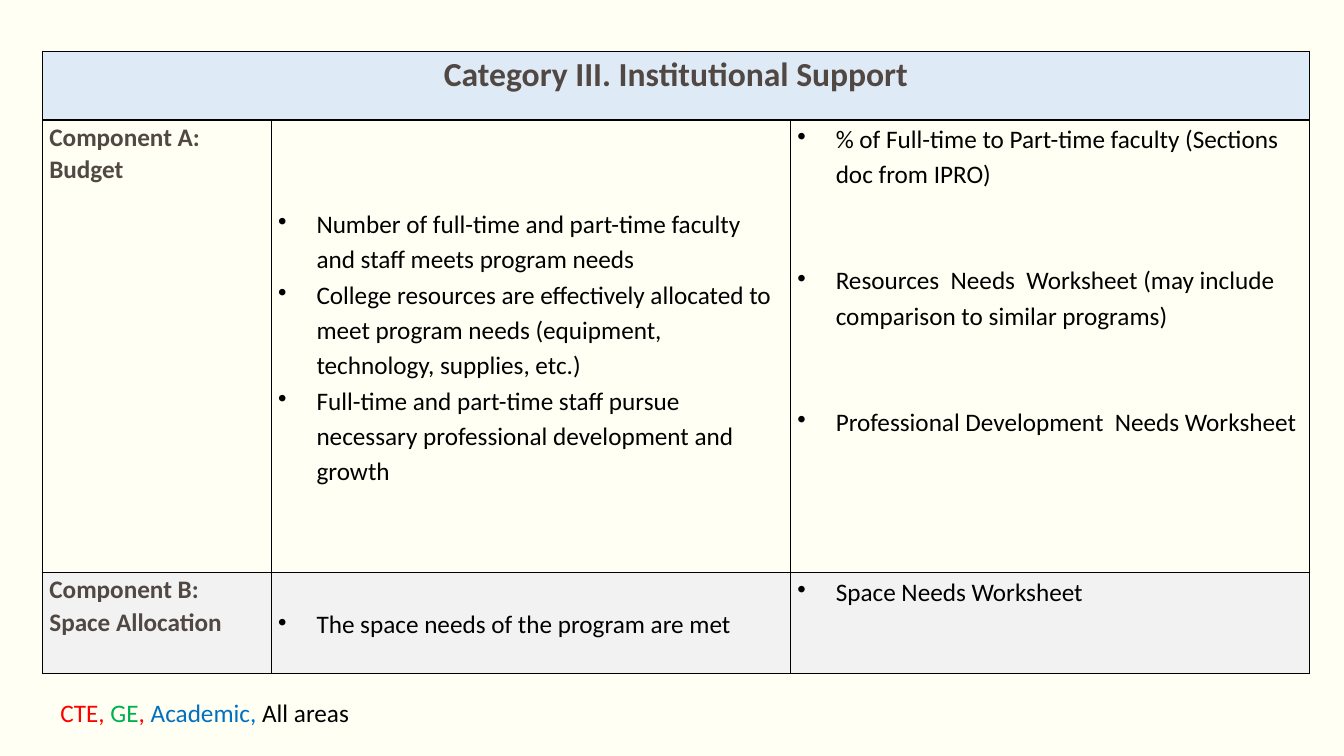
from dataclasses import dataclass

from lxml import etree
from pptx import Presentation
from pptx.dml.color import RGBColor
from pptx.enum.text import MSO_ANCHOR as Anchor, MSO_AUTO_SIZE as AutoSize, PP_ALIGN as Align
from pptx.oxml.ns import qn
from pptx.util import Inches, Pt

COLORS = {
    "page": "FFFFF3", "header": "DEEAF6", "band": "F2F2F2",
    "heading": "514843", "black": "000000",
    "red": "FF0000", "green": "00B050", "blue": "0070C0",
}
FONT = "Calibri"
COLUMN_WIDTHS = (2.27, 5.15, 5.15)
ROW_HEIGHTS = (0.68, 4.49, 1.0)
HANGING = Inches(0.38)


@dataclass(frozen=True)
class Component:
    heading: str
    criteria: tuple[str, ...]
    evidence: tuple[str, ...]
    evidence_gap: float = 0
    fill: str | None = None


COMPONENTS = (
    Component(
        "Component A: Budget",
        ("Number of full-time and part-time faculty and staff meets program needs",
         "College resources are effectively allocated to meet program needs "
         "(equipment, technology, supplies, etc.)",
         "Full-time and part-time staff pursue necessary professional development and growth"),
        ("% of Full-time to Part-time faculty (Sections doc from IPRO)",
         "Resources  Needs  Worksheet (may include comparison to similar programs)",
         "Professional Development  Needs Worksheet"),
        evidence_gap=50.5,
    ),
    Component(
        "Component B: Space Allocation",
        ("The space needs of the program are met",),
        ("Space Needs Worksheet",),
        fill="band",
    ),
)
LEGEND = (("CTE, ", "red"), ("GE", "green"), (", ", "red"),
          ("Academic, ", "blue"), ("All areas", "black"))


def rgb(name: str) -> RGBColor:
    return RGBColor.from_string(COLORS[name])


def style_font(font, color: str, size: int = 18, bold: bool = False) -> None:
    font.name, font.size, font.bold = FONT, Pt(size), bold
    font.color.rgb = rgb(color)


def style_cell(cell, fill: str | None) -> None:
    """Set the margins, fill and thin black borders of one cell."""
    cell.margin_left = cell.margin_right = Inches(0.07)
    cell.margin_top = cell.margin_bottom = 0
    if fill:
        cell.fill.solid()
        cell.fill.fore_color.rgb = rgb(fill)
    else:
        cell.fill.background()
    properties = cell._tc.get_or_add_tcPr()
    for position, side in enumerate(("lnL", "lnR", "lnT", "lnB")):
        border = etree.Element(qn(f"a:{side}"), w=str(Pt(1)))
        solid = etree.SubElement(border, qn("a:solidFill"))
        etree.SubElement(solid, qn("a:srgbClr"), val=COLORS["black"])
        properties.insert(position, border)


def write_heading(cell, text: str, size: int = 18, align: Align = Align.LEFT) -> None:
    heading = cell.text_frame.paragraphs[0]
    heading.text = text
    heading.alignment = align
    heading.line_spacing = 1.07
    style_font(heading.font, "heading", size, bold=True)


def write_bullets(cell, items: tuple[str, ...], gap: float = 0) -> None:
    frame = cell.text_frame
    for index, text in enumerate(items):
        item = frame.add_paragraph() if index else frame.paragraphs[0]
        item.text = text
        item.line_spacing = 1.15
        if index and gap:
            item.space_before = Pt(gap)
        style_font(item.font, "black")
        properties = item._p.get_or_add_pPr()
        properties.set("marL", str(HANGING))
        properties.set("indent", str(-HANGING))
        # The bullet goes before the default run properties
        bullet = etree.Element(qn("a:buChar"), char="•")
        properties.find(qn("a:defRPr")).addprevious(bullet)


def add_support_table(slide) -> None:
    table = slide.shapes.add_table(
        len(ROW_HEIGHTS), len(COLUMN_WIDTHS), Inches(0.42), Inches(0.51),
        Inches(sum(COLUMN_WIDTHS)), Inches(sum(ROW_HEIGHTS))).table
    table.first_row = table.horz_banding = False
    for column, width in zip(table.columns, COLUMN_WIDTHS):
        column.width = Inches(width)
    for row, height in zip(table.rows, ROW_HEIGHTS):
        row.height = Inches(height)

    # Fills and borders
    fills = ("header", *(component.fill for component in COMPONENTS))
    for row, fill in zip(table.rows, fills):
        for cell in row.cells:
            style_cell(cell, fill)

    # Category row
    category = table.cell(0, 0)
    category.merge(table.cell(0, len(COLUMN_WIDTHS) - 1))
    write_heading(category, "Category III. Institutional Support", 24, Align.CENTER)

    # Component rows
    for row_number, component in enumerate(COMPONENTS, start=1):
        heading, criteria, evidence = table.rows[row_number].cells
        write_heading(heading, component.heading)
        criteria.vertical_anchor = Anchor.MIDDLE
        write_bullets(criteria, component.criteria)
        write_bullets(evidence, component.evidence, component.evidence_gap)


def add_legend(slide) -> None:
    legend = slide.shapes.add_textbox(Inches(0.5), Inches(6.87), Inches(3.49), Inches(0.4))
    frame = legend.text_frame
    frame.word_wrap = False
    frame.auto_size = AutoSize.SHAPE_TO_FIT_TEXT
    areas = frame.paragraphs[0]
    areas.font.name, areas.font.size = FONT, Pt(18)
    for text, color in LEGEND:
        area = areas.add_run()
        area.text = text
        area.font.color.rgb = rgb(color)


def main() -> None:
    deck = Presentation()
    deck.slide_width, deck.slide_height = Inches(13.33), Inches(7.5)
    slide = deck.slides.add_slide(deck.slide_layouts[6])
    slide.background.fill.solid()
    slide.background.fill.fore_color.rgb = rgb("page")
    add_support_table(slide)
    add_legend(slide)
    deck.save("out.pptx")


if __name__ == "__main__":
    main()
